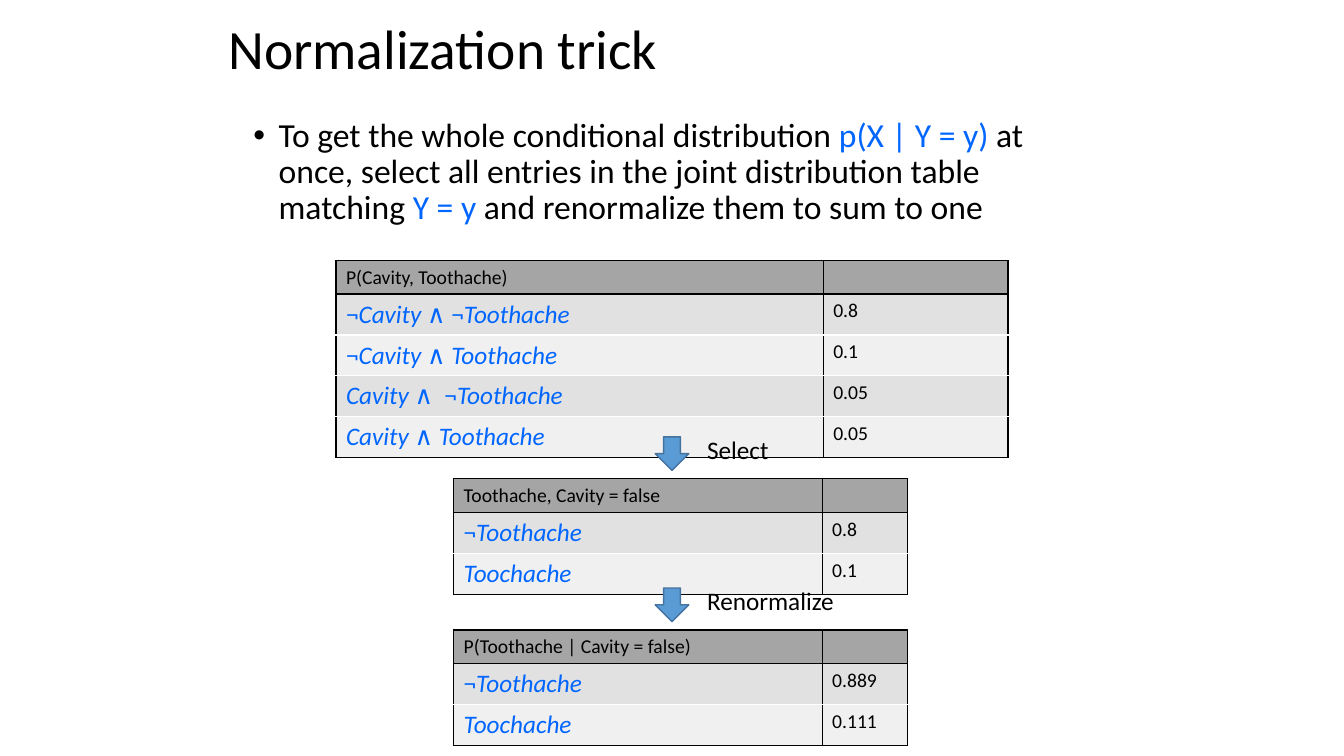
from lxml import etree
from pptx import Presentation
from pptx import util as u
from pptx.dml.color import RGBColor
from pptx.enum import shapes, text
from pptx.oxml.ns import qn

PX = 9525
BLACK, WHITE, BLUE = "000000", "FFFFFF", "0066FF"


def px(*values):
    return [u.Emu(v * PX) for v in values]


def add_run(p, words, size, color=BLACK, italic=False):
    r = p.add_run()
    r.text = words
    r.font.name = "Calibri"
    r.font.size = u.Pt(size)
    r.font.italic = italic
    r.font.color.rgb = RGBColor.from_string(color)


prs = Presentation()
prs.slide_width, prs.slide_height = px(1280, 720)
s = prs.slides.add_slide(prs.slide_layouts[5])

title = s.shapes.title
title.left, title.top, title.width, title.height = px(208, 16, 864, 67)
tf = title.text_frame
tf.auto_size = text.MSO_AUTO_SIZE.NONE
tf.vertical_anchor = text.MSO_ANCHOR.MIDDLE
p = tf.paragraphs[0]
p.alignment = text.PP_ALIGN.LEFT
p.line_spacing = 0.9
add_run(p, "Normalization trick", 39.6)

tf = s.shapes.add_textbox(*px(232, 108, 808, 475)).text_frame
tf.word_wrap = True
p = tf.paragraphs[0]
pPr = p._p.get_or_add_pPr()
pPr.set("marL", str(24 * PX))
pPr.set("indent", str(-24 * PX))
etree.SubElement(pPr, qn("a:buFont")).set("typeface", "Arial")
etree.SubElement(pPr, qn("a:buChar")).set("char", "•")
p.line_spacing = 0.9
for words, color in [
    ("To get the whole conditional distribution ", BLACK),
    ("p(X | Y = y)", BLUE),
    (" at once, select all entries in the joint distribution table matching ", BLACK),
    ("Y = y", BLUE),
    (" and renormalize them to sum to one", BLACK),
]:
    add_run(p, words, 24, color)

# Event labels alternate upright and italic parts at each bar.
tables = [
    (320, 248, (464, 176), "P(Cavity, Toothache)", [
        ("¬|Cavity |∧ ¬|Toothache", "0.8"),
        ("¬|Cavity |∧| Toothache", "0.1"),
        ("|Cavity |∧  ¬|Toothache", "0.05"),
        ("|Cavity |∧| Toothache", "0.05"),
    ]),
    (432, 456, (351, 81), "Toothache, Cavity = false", [
        ("¬|Toothache", "0.8"),
        ("|Toochache", "0.1"),
    ]),
    (432, 600, (351, 81), "P(Toothache | Cavity = false)", [
        ("¬|Toothache", "0.889"),
        ("|Toochache", "0.111"),
    ]),
]
for left, top, widths, heading, events in tables:
    last = len(events)
    heights = [32] + [39] * last
    frame = s.shapes.add_table(last + 1, 2, *px(left, top, sum(widths), sum(heights)))
    table = frame.table
    for column, width in zip(table.columns, px(*widths)):
        column.width = width
    for row, height in zip(table.rows, px(*heights)):
        row.height = height

    add_run(table.cell(0, 0).text_frame.paragraphs[0], heading, 14)
    blank = table.cell(0, 1).text_frame.paragraphs[0]
    etree.SubElement(blank._p, qn("a:endParaRPr")).set("sz", "1400")
    for i, (label, value) in enumerate(events, 1):
        p = table.cell(i, 0).text_frame.paragraphs[0]
        for k, part in enumerate(label.split("|")):
            if part:
                add_run(p, part, 18, BLUE, k % 2 == 1)
        add_run(table.cell(i, 1).text_frame.paragraphs[0], value, 14)

    for i in range(last + 1):
        fill = "A5A5A5" if i == 0 else "E1E1E1" if i % 2 else "F0F0F0"
        above = BLACK if i < 2 else WHITE
        below = BLACK if i in (0, last) else WHITE
        for cell in table.rows[i].cells:
            tcPr = cell._tc.get_or_add_tcPr()
            for side, color in zip("LRTB", (BLACK, BLACK, above, below)):
                ln = etree.SubElement(tcPr, qn("a:ln" + side), w="12700")
                solid = etree.SubElement(ln, qn("a:solidFill"))
                etree.SubElement(solid, qn("a:srgbClr")).set("val", color)
            cell.fill.solid()
            cell.fill.fore_color.rgb = RGBColor.from_string(fill)

steps = [("Select", 416, 79), ("Renormalize", 560, 141)]
for name, top, width in steps:
    arrow = s.shapes.add_shape(shapes.MSO_SHAPE.DOWN_ARROW, *px(624, top, 32, 32))
    arrow.shadow.inherit = False
    arrow.fill.solid()
    arrow.fill.fore_color.rgb = RGBColor.from_string("5B9BD5")
    arrow.line.color.rgb = RGBColor.from_string("43739E")
    arrow.line.width = u.Pt(1)
for name, top, width in steps:
    tf = s.shapes.add_textbox(*px(664, top - 7, width, 38)).text_frame
    tf.word_wrap = False
    tf.auto_size = text.MSO_AUTO_SIZE.SHAPE_TO_FIT_TEXT
    add_run(tf.paragraphs[0], name, 18)

prs.save("out.pptx")
